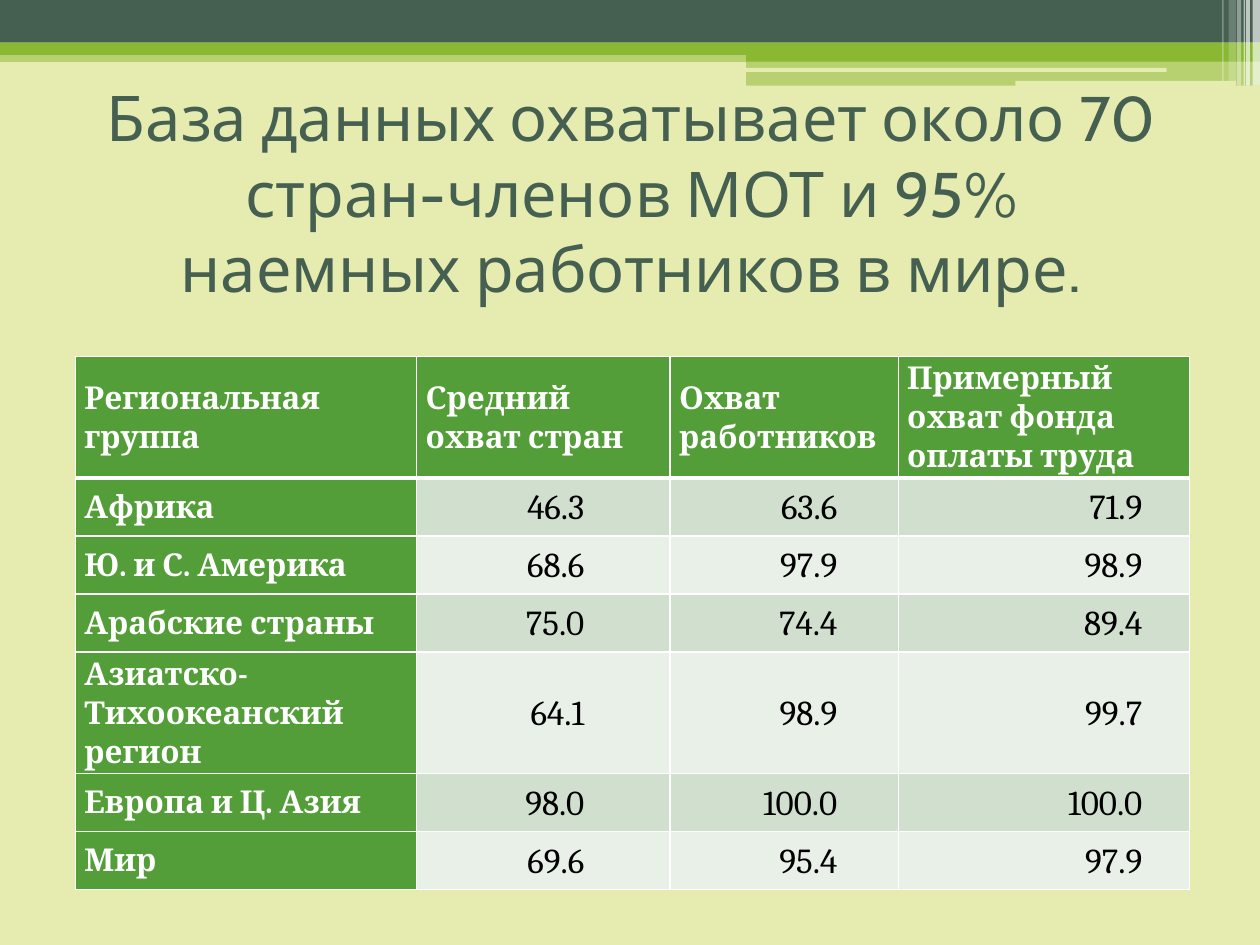
from dataclasses import dataclass

from lxml import etree
from pptx import Presentation
from pptx.dml.color import RGBColor
from pptx.enum.shapes import MSO_SHAPE
from pptx.enum.text import MSO_ANCHOR, PP_ALIGN
from pptx.oxml.ns import qn
from pptx.util import Cm, Pt

RECT, ROUNDED = MSO_SHAPE.RECTANGLE, MSO_SHAPE.ROUNDED_RECTANGLE
LEFT, CENTER, RIGHT, JUSTIFY = PP_ALIGN.LEFT, PP_ALIGN.CENTER, PP_ALIGN.RIGHT, PP_ALIGN.JUSTIFY
MIDDLE = MSO_ANCHOR.MIDDLE

DARK, LIME, CREAM, WHITE, BLACK = "455F51", "8AB833", "E6ECB0", "FFFFFF", "000000"
GREEN, BANDS = "549E39", ("D1DFCE", "E9F0E8")
WIDTH, HEIGHT = 25.4, 19.05
HALF_LEFT, HALF_WIDTH = 15.04, 10.36


@dataclass
class Bar:
    left: float
    top: float
    width: float
    height: float
    color: str
    opacity: int = 100
    preset: MSO_SHAPE = RECT


@dataclass
class Region:
    name: str
    coverage: tuple


@dataclass
class Column:
    heading: str
    width: float
    right_margin: float = 0.18


BARS = [
    Bar(0, 1.02, WIDTH, 0.55 - 0.32, LIME, 50),
    Bar(0, 0, WIDTH, 0.86, DARK),
    Bar(0, 0.86, WIDTH, 0.25, LIME),
    Bar(HALF_LEFT, 0.99, HALF_WIDTH, 0.25, LIME),
    Bar(HALF_LEFT, 1.22, HALF_WIDTH, 0.51, LIME, 50),
    Bar(15.01, 1.37, 8.51, 0.08, CREAM, preset=ROUNDED),
    Bar(20.47, 1.63, 4.45, 0.1, CREAM, preset=ROUNDED),
    Bar(25.25, 0, 0.15, 1.73, WHITE, 65),
    Bar(25.12, 0, 0.08, 1.73, WHITE, 65),
    Bar(25.07, 0, 0.03, 1.73, WHITE, 60),
    Bar(24.94, 0, 0.08, 1.73, WHITE, 40),
    Bar(24.77, 0, 0.15, 1.63, WHITE, 20),
    Bar(24.64, 0, 0.03, 1.63, WHITE, 30),
]

COLUMNS = [
    Column("Региональная группа", 6.88),
    Column("Средний охват стран", 5.11, 1.73),
    Column("Охват работников", 4.6, 1.23),
    Column("Примерный охват фонда оплаты труда", 5.87, 0.95),
]

REGIONS = [
    Region("Африка", ("46.3", "63.6", "71.9")),
    Region("Ю. и С. Америка", ("68.6", "97.9", "98.9")),
    Region("Арабские страны", ("75.0", "74.4", "89.4")),
    Region("Азиатско-Тихоокеанский регион", ("64.1", "98.9", "99.7")),
    Region("Европа и Ц. Азия", ("98.0", "100.0", "100.0")),
    Region("Мир", ("69.6", "95.4", "97.9")),
]

TITLE_FORMAT = {"name": "Cabin", "size": Pt(36), "bold": False}
LABEL_FORMAT = {"name": "Cambria", "size": Pt(18), "bold": True}
VALUE_FORMAT = {"name": "Cambria", "size": Pt(20), "bold": False}


def rgb(value: str) -> RGBColor:
    return RGBColor.from_string(value)


def paint(fill, color: str) -> None:
    fill.solid()
    fill.fore_color.rgb = rgb(color)


def apply(target, values: dict) -> None:
    for attribute, value in values.items():
        setattr(target, attribute, value)


def write(frame, text: str, font_format: dict, color: str, alignment, spacing=None) -> None:
    paragraph = frame.paragraphs[0]
    apply(paragraph, {"alignment": alignment, "line_spacing": spacing})
    run = paragraph.add_run()
    run.text = text
    apply(run.font, font_format)
    run.font.color.rgb = rgb(color)


def draw_bar(slide, bar: Bar) -> None:
    shape = slide.shapes.add_shape(
        bar.preset, Cm(bar.left), Cm(bar.top), Cm(bar.width), Cm(bar.height))
    shape.shadow.inherit = False
    paint(shape.fill, bar.color)
    shape.line.fill.background()
    if bar.opacity < 100:
        color = shape.element.spPr.find(qn("a:solidFill")).find(qn("a:srgbClr"))
        etree.SubElement(color, qn("a:alpha"), val=str(bar.opacity * 1000))


def draw_title(slide, text: str) -> None:
    title = slide.shapes.add_textbox(Cm(1.78), Cm(2.03), Cm(21.89), Cm(3.68))
    apply(title.text_frame, {"word_wrap": True, "vertical_anchor": MIDDLE})
    write(title.text_frame, text, TITLE_FORMAT, DARK, CENTER)


def border_cell(cell, top: float, bottom: float) -> None:
    properties = cell._tc.get_or_add_tcPr()
    sides = {"lnL": 1, "lnR": 1, "lnT": top, "lnB": bottom}
    for position, (side, points) in enumerate(sides.items()):
        line = etree.Element(qn(f"a:{side}"), w=str(Pt(points)))
        solid = etree.SubElement(line, qn("a:solidFill"))
        etree.SubElement(solid, qn("a:srgbClr"), val=WHITE)
        properties.insert(position, line)


def draw_cell(cell, text: str, row: int, column: int) -> None:
    is_value = row > 0 and column > 0
    paint(cell.fill, BANDS[(row - 1) % 2] if is_value else GREEN)
    apply(cell, {
        "vertical_anchor": MIDDLE,
        "margin_left": Cm(0.18),
        "margin_right": Cm(COLUMNS[column].right_margin if is_value else 0.18),
        "margin_top": 0,
        "margin_bottom": 0,
    })
    if is_value:
        write(cell.text_frame, text, VALUE_FORMAT, BLACK, RIGHT, 1.07)
    else:
        write(cell.text_frame, text, LABEL_FORMAT, WHITE, JUSTIFY if row else LEFT, 1.07)
    border_cell(cell, 3 if row == 1 else 1, 3 if row == 0 else 1)


def draw_coverage(slide) -> None:
    rows = [[column.heading for column in COLUMNS]]
    rows += [[region.name, *region.coverage] for region in REGIONS]
    table = slide.shapes.add_table(
        len(rows), len(COLUMNS), Cm(1.52), Cm(7.19), Cm(22.43), Cm(10.77)).table
    apply(table, {"first_row": False, "horz_banding": False})
    for grid_column, column in zip(table.columns, COLUMNS):
        grid_column.width = Cm(column.width)
    for row, texts in enumerate(rows):
        table.rows[row].height = Cm(1.17 if row else 2.39)
        for column, text in enumerate(texts):
            draw_cell(table.cell(row, column), text, row, column)


def main() -> None:
    presentation = Presentation()
    apply(presentation, {"slide_width": Cm(WIDTH), "slide_height": Cm(HEIGHT)})
    slide = presentation.slides.add_slide(presentation.slide_layouts[6])
    paint(slide.background.fill, CREAM)
    for bar in BARS:
        draw_bar(slide, bar)
    draw_title(slide, "База данных охватывает около 70 стран-членов МОТ и 95% наемных работников в мире.")
    draw_coverage(slide)
    presentation.save("out.pptx")


if __name__ == "__main__":
    main()
